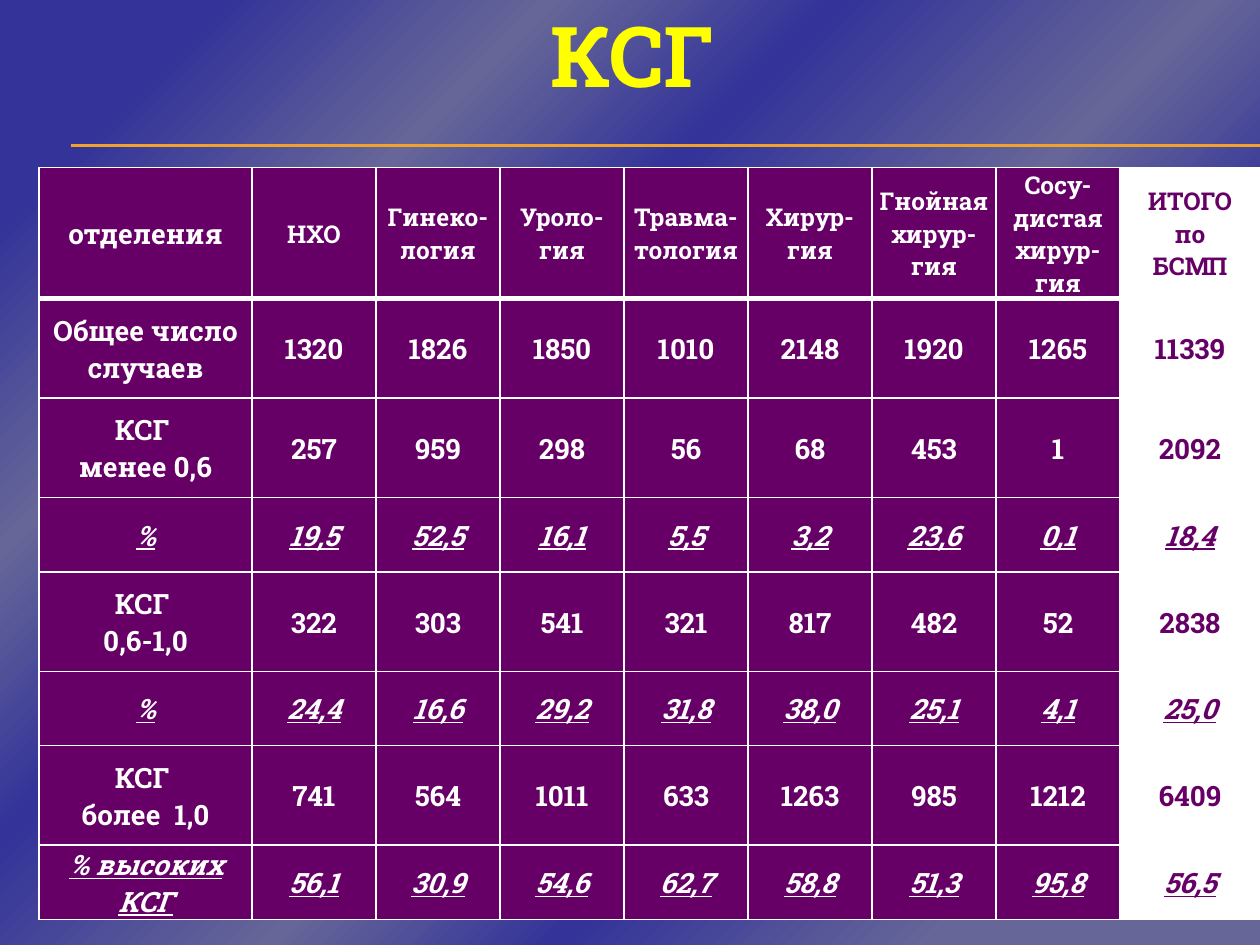
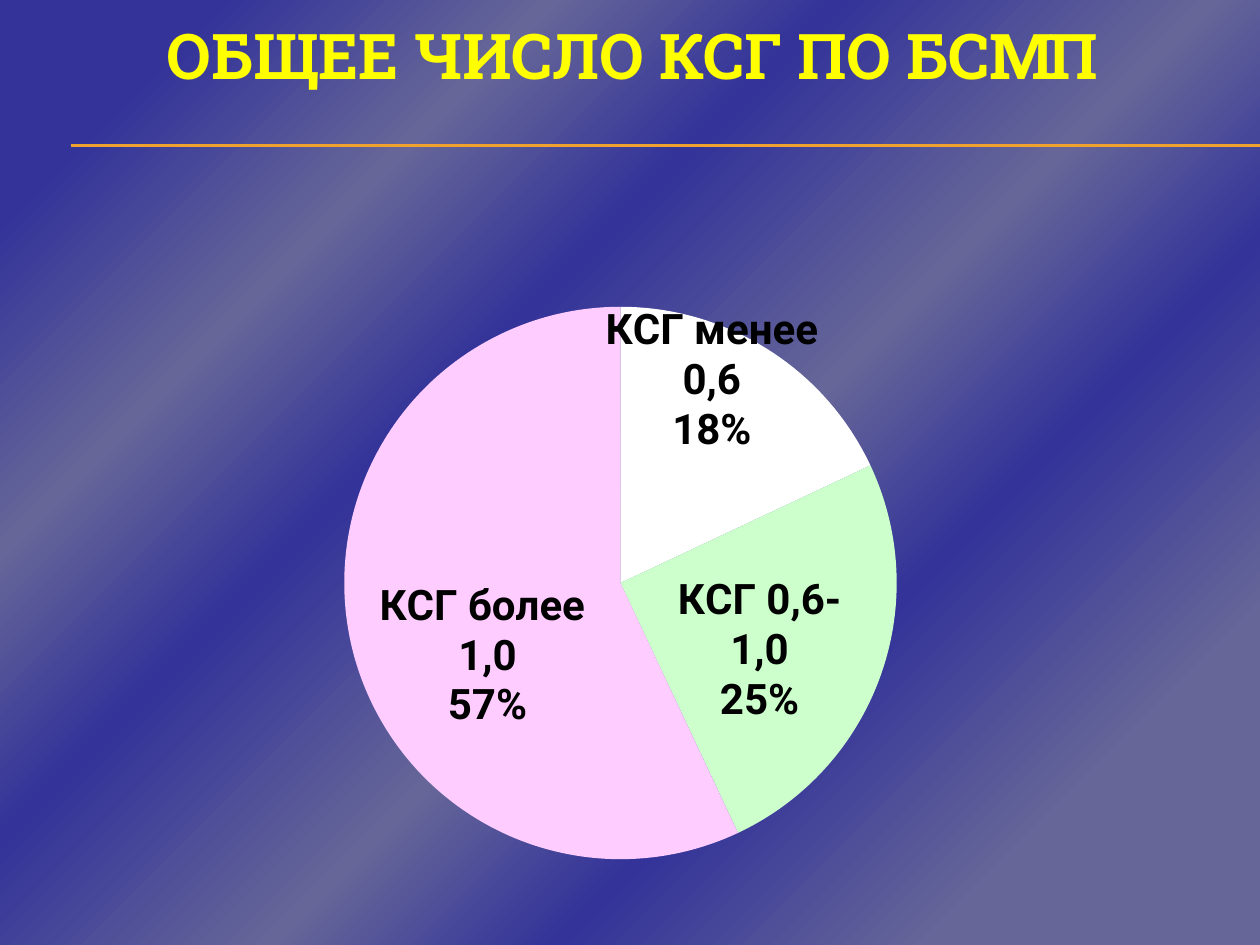
from copy import deepcopy
from lxml.etree import Element, SubElement
from pptx import Presentation
from pptx.chart.data import CategoryChartData
from pptx.dml.color import RGBColor
from pptx.enum.chart import XL_CHART_TYPE, XL_LABEL_POSITION
from pptx.enum.shapes import MSO_CONNECTOR
from pptx.enum.text import MSO_ANCHOR, PP_ALIGN
from pptx.oxml.ns import qn
from pptx.util import Inches, Pt

YELLOW, ORANGE, PURPLE, WHITE = "FFFF00", "F0A22E", "660066", "FFFFFF"
NAVY, SLATE = "333399", "666699"
BACKGROUND_STOPS = [(10, NAVY), (25, SLATE), (38, NAVY), (55, SLATE), (68, NAVY), (85, SLATE)]
SERIF, SANS = "Roboto Slab", "Roboto"
TITLES = [("КСГ", 48), ("ОБЩЕЕ ЧИСЛО КСГ ПО БСМП", 36)]

ROWS = [
    ["отделения", "НХО", "Гинеко-логия", "Уроло-гия", "Травма-тология", "Хирур-гия",
     "Гнойная хирур-гия", "Сосу-дистая хирур-гия", "ИТОГО\n по \nБСМП"],
    ["Общее число случаев", "1320", "1826", "1850", "1010", "2148", "1920", "1265", "11339"],
    ["КСГ \nменее 0,6", "257", "959", "298", "56", "68", "453", "1", "2092"],
    ["%", "19,5", "52,5", "16,1", "5,5", "3,2", "23,6", "0,1", "18,4"],
    ["КСГ \n0,6-1,0", "322", "303", "541", "321", "817", "482", "52", "2838"],
    ["%", "24,4", "16,6", "29,2", "31,8", "38,0", "25,1", "4,1", "25,0"],
    ["КСГ \nболее  1,0", "741", "564", "1011", "633", "1263", "985", "1212", "6409"],
    ["% высоких КСГ", "56,1", "30,9", "54,6", "62,7", "58,8", "51,3", "95,8", "56,5"],
]
TABLE_WIDTH, NAME_WIDTH, TOTAL_WIDTH = 9.69, 1.69, 1.11
DEPARTMENT_WIDTH = (TABLE_WIDTH - NAME_WIDTH - TOTAL_WIDTH) / 7
COLUMN_WIDTHS = [NAME_WIDTH] + [DEPARTMENT_WIDTH] * 7 + [TOTAL_WIDTH]
ROW_HEIGHTS = [1.04, 0.79] + [0.79, 0.59] * 3
# Name, share, colour, label shift as a fraction of the chart
SLICES = [("КСГ менее 0,6", 18, WHITE, (0.05, -0.08)),
          ("КСГ 0,6-1,0", 25, "CCFFCC", (-0.03, 0.08)),
          ("КСГ более  1,0", 57, "FFCCFF", (0.02, 0.14))]


def color(value):
    return RGBColor.from_string(value)


def write_lines(frame, text, size, text_color, slanted=False):
    """Write each line of text as a centred bold paragraph; slanted adds italic and underline."""
    frame.word_wrap = True
    for number, line in enumerate(text.split("\n")):
        para = frame.add_paragraph() if number else frame.paragraphs[0]
        para.alignment = PP_ALIGN.CENTER
        span = para.add_run()
        span.text = line
        span.font.name = SERIF
        span.font.size = Pt(size)
        span.font.bold = True
        span.font.italic = span.font.underline = slanted
        span.font.color.rgb = color(text_color)


deck = Presentation()
deck.slide_width, deck.slide_height = Inches(10), Inches(7.5)

# Shared background, rules and titles
pages = []
for title, size in TITLES:
    page = deck.slides.add_slide(deck.slide_layouts[6])
    pages.append(page)
    fill = page.background.fill
    fill.gradient()
    fill.gradient_angle = 315
    stops = next(page.element.iter(qn("a:gsLst")))
    for stop in list(stops):
        stops.remove(stop)
    for position, shade in BACKGROUND_STOPS:
        stop = SubElement(stops, qn("a:gs"), pos=str(position * 1000))
        SubElement(stop, qn("a:srgbClr"), val=shade)

    for y in (1.15, 1.16):
        rule = page.shapes.add_connector(
            MSO_CONNECTOR.STRAIGHT, Inches(0.56), Inches(y), Inches(10), Inches(y))
        rule.line.color.rgb = color(ORANGE)
        rule.line.width = Pt(0.75)
        SubElement(rule.element.spPr, qn("a:effectLst"))

    box = page.shapes.add_textbox(Inches(0.02), Inches(0.13), Inches(10), Inches(0.6))
    box.text_frame.vertical_anchor = MSO_ANCHOR.MIDDLE
    write_lines(box.text_frame, title, size, YELLOW)

table_page, chart_page = pages

# Cases by department
table = table_page.shapes.add_table(
    len(ROWS), len(COLUMN_WIDTHS), Inches(0.31), Inches(1.33),
    Inches(TABLE_WIDTH), Inches(sum(ROW_HEIGHTS))).table
for column, width in zip(table.columns, COLUMN_WIDTHS):
    column.width = Inches(width)
for row, height in zip(table.rows, ROW_HEIGHTS):
    row.height = Inches(height)

for r, values in enumerate(ROWS):
    for c, value in enumerate(values):
        cell = table.cell(r, c)
        cell.vertical_anchor = MSO_ANCHOR.MIDDLE
        cell.margin_left = cell.margin_right = cell.margin_top = Inches(0.01)
        cell.margin_bottom = 0
        properties = cell._tc.get_or_add_tcPr()
        for side in ("lnL", "lnR", "lnT", "lnB"):
            heavy = (r == 0 and side == "lnB") or (r == 1 and side == "lnT")
            border = SubElement(properties, qn("a:" + side), w=str(Pt(3 if heavy else 1)))
            SubElement(SubElement(border, qn("a:solidFill")), qn("a:srgbClr"), val=WHITE)
        is_total = c == len(values) - 1
        cell.fill.solid()
        cell.fill.fore_color.rgb = color(WHITE if is_total else PURPLE)
        write_lines(cell.text_frame, value, 14 if r == 0 and c > 0 else 16,
                    PURPLE if is_total else WHITE, slanted=values[0].startswith("%"))

# Shares of all cases
data = CategoryChartData()
data.categories = [name for name, share, shade, shift in SLICES]
data.add_series("Series 1", [share for name, share, shade, shift in SLICES])
chart = chart_page.shapes.add_chart(
    XL_CHART_TYPE.PIE, Inches(0.59), Inches(1.78), Inches(8.5), Inches(5.04), data).chart
chart.has_legend = False
chart.has_title = False
chart.font.name = SANS
chart.font.size = Pt(18)
chart.font.color.rgb = color("000000")
chart.plots[0].vary_by_categories = True

series = chart.plots[0].series[0]
labels = series.data_labels
labels.show_value = False
labels.show_category_name = True
labels.show_percentage = True
labels.number_format = "0%"
labels.number_format_is_linked = False
labels.position = XL_LABEL_POSITION.INSIDE_END
labels.font.name = SANS
labels.font.size = Pt(24)
labels.font.bold = True
labels.font.color.rgb = color("000000")
label_list = next(chart.element.iter(qn("c:dLbls")))
separator = Element(qn("c:separator"))
separator.text = "\n"
last_flag = label_list.find(qn("c:showBubbleSize"))
if last_flag is None:
    last_flag = label_list.find(qn("c:showPercent"))
last_flag.addnext(separator)

label_settings = [item for item in label_list if item.tag != qn("c:showLeaderLines")]
for number, (name, share, shade, shift) in enumerate(SLICES):
    slice_fill = series.points[number].format.fill
    slice_fill.solid()
    slice_fill.fore_color.rgb = color(shade)

    label = Element(qn("c:dLbl"))
    SubElement(label, qn("c:idx"), val=str(number))
    offset = SubElement(SubElement(label, qn("c:layout")), qn("c:manualLayout"))
    for axis, distance in zip("xy", shift):
        SubElement(offset, qn("c:" + axis), val=str(distance))
    label.extend(deepcopy(label_settings))
    label_list.insert(number, label)

plot_area = next(chart.element.iter(qn("c:plotArea")))
layout = plot_area.find(qn("c:layout"))
if layout is None:
    layout = Element(qn("c:layout"))
    plot_area.insert(0, layout)
manual = SubElement(layout, qn("c:manualLayout"))
for tag, value in [("layoutTarget", "inner"), ("xMode", "edge"), ("yMode", "edge"),
                   ("x", "0.25"), ("y", "0.13"), ("w", "0.52"), ("h", "0.87")]:
    SubElement(manual, qn("c:" + tag), val=value)

deck.save("out.pptx")
